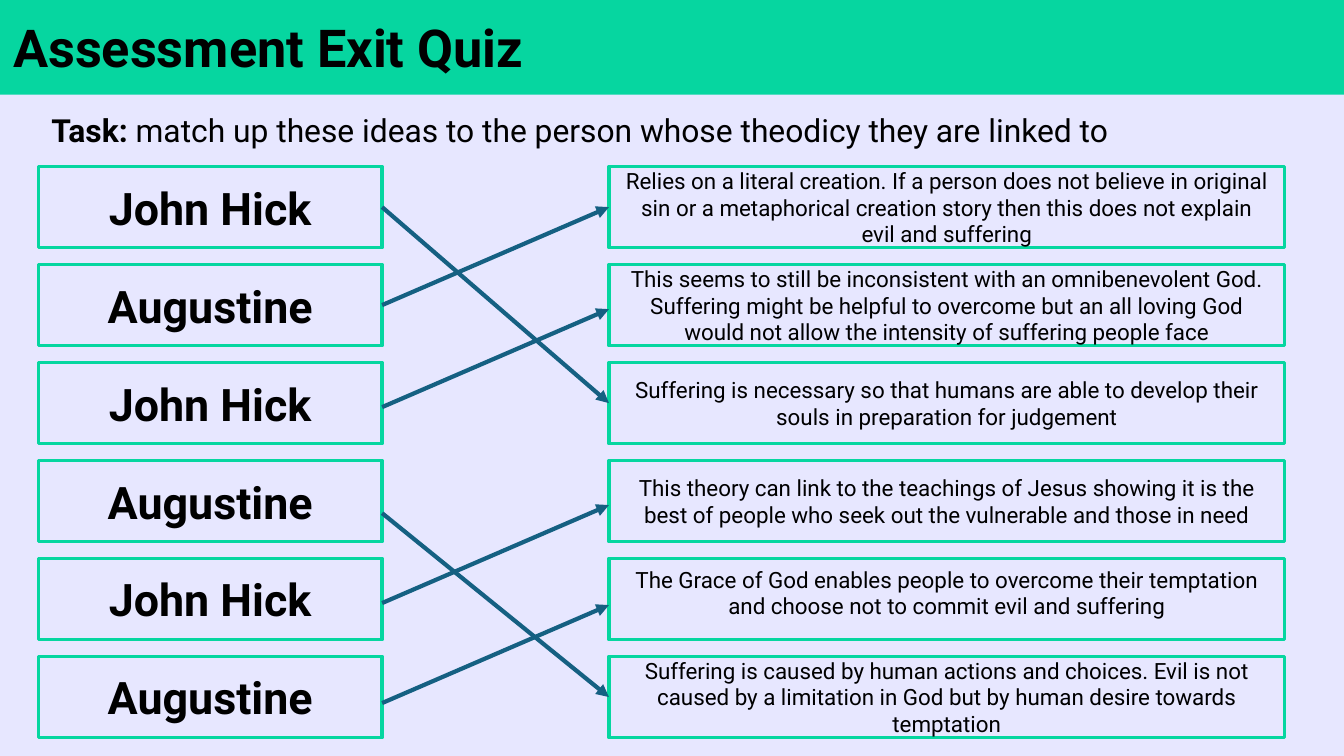
from lxml import etree
from pptx import Presentation
from pptx import util as u
from pptx.dml.color import RGBColor
from pptx.enum import shapes, text
from pptx.oxml import ns

GREEN = RGBColor(0x06, 0xD6, 0xA0)
BLUE = RGBColor(0x15, 0x60, 0x82)
LILAC = RGBColor(0xE7, 0xE7, 0xFF)
BLACK = RGBColor(0, 0, 0)
FONT = "Roboto"
INSET = 0.13

ROW_TOP, ROW_PITCH, ROW_HEIGHT = 1.65, 0.972, 0.81
NAME_COLUMN = (0.38, 3.41)
IDEA_COLUMN = (6.04, 6.7)

NAMES = ["John Hick", "Augustine", "John Hick", "Augustine", "John Hick", "Augustine"]
IDEAS = [
    "Relies on a literal creation. If a person does not believe in original sin "
    "or a metaphorical creation story then this does not explain evil and suffering",
    "This seems to still be inconsistent with an omnibenevolent God. Suffering might be "
    "helpful to overcome but an all loving God would not allow the intensity of "
    "suffering people face",
    "Suffering is necessary so that humans are able to develop their souls in "
    "preparation for judgement",
    "This theory can link to the teachings of Jesus showing it is the best of people "
    "who seek out the vulnerable and those in need",
    "The Grace of God enables people to overcome their temptation and choose not to "
    "commit evil and suffering",
    "Suffering is caused by human actions and choices. Evil is not caused by a "
    "limitation in God but by human desire towards temptation",
]
RAISED_IDEA = 4
# Name row, idea row, then how far each end sits below the middle of its box
MATCHES = [(0, 2, 0, 0), (1, 0, 0, 0), (2, 1, 0.04, 0.04),
           (3, 5, 0.12, 0), (4, 3, 0.04, 0.04), (5, 4, 0.06, 0.06)]


def style_span(span, size, bold=False):
    span.font.name, span.font.size, span.font.bold = FONT, u.Pt(size), bold
    span.font.color.rgb = BLACK


def set_insets(frame):
    frame.word_wrap = True
    frame.margin_left = frame.margin_right = u.Inches(INSET)
    frame.margin_top = frame.margin_bottom = u.Inches(INSET)


def add_box(page, at, words, size, bold=False, align=text.PP_ALIGN.CENTER):
    """Add an unfilled, unlined rectangle holding one vertically centred paragraph."""
    box = page.shapes.add_shape(shapes.MSO_SHAPE.RECTANGLE, *map(u.Inches, at))
    box.shadow.inherit = False
    box.fill.background()
    box.line.fill.background()
    frame = box.text_frame
    set_insets(frame)
    frame.vertical_anchor = text.MSO_ANCHOR.MIDDLE
    frame.text = words
    para = frame.paragraphs[0]
    para.alignment = align
    style_span(para.runs[0], size, bold)
    return box


def add_banner(page, at):
    banner = add_box(page, at, "Assessment Exit Quiz", 37.3, True, text.PP_ALIGN.LEFT)
    banner.fill.solid()
    banner.fill.fore_color.rgb = GREEN


def add_task(page, at):
    frame = page.shapes.add_textbox(*map(u.Inches, at)).text_frame
    set_insets(frame)
    frame.auto_size = text.MSO_AUTO_SIZE.SHAPE_TO_FIT_TEXT
    para = frame.paragraphs[0]
    for words, bold in (
        ("Task: ", True),
        ("match up these ideas to the person whose theodicy they are linked to", False),
    ):
        span = para.add_run()
        span.text = words
        style_span(span, 22.7, bold)


def add_column(page, column, entries, size, bold=False):
    left, width = column
    boxes = []
    for row, words in enumerate(entries):
        at = (left, ROW_TOP + row * ROW_PITCH, width, ROW_HEIGHT)
        box = add_box(page, at, words, size, bold)
        box.line.color.rgb = GREEN
        box.line.width = u.Pt(2.25)
        boxes.append(box)
    return boxes


def add_match(page, name, idea, name_drop, idea_drop):
    """Draw an arrow from a name to an idea, joined wherever it meets a side's middle."""
    arrow = page.shapes.add_connector(
        shapes.MSO_CONNECTOR.STRAIGHT,
        name.left + name.width, name.top + name.height // 2 + u.Inches(name_drop),
        idea.left, idea.top + idea.height // 2 + u.Inches(idea_drop),
    )
    if not name_drop:
        arrow.begin_connect(name, 3)
    if not idea_drop:
        arrow.end_connect(idea, 1)
    arrow.line.color.rgb = BLUE
    arrow.line.width = u.Pt(3)
    etree.SubElement(arrow.line._get_or_add_ln(), ns.qn("a:tailEnd"), type="triangle")
    etree.SubElement(arrow._element.spPr, ns.qn("a:effectLst"))


def add_quiz(page):
    names = add_column(page, NAME_COLUMN, NAMES, 32, True)
    ideas = add_column(page, IDEA_COLUMN, IDEAS, 16)
    ideas[RAISED_IDEA].text_frame.margin_bottom = u.Inches(2 * INSET)
    for name_row, idea_row, name_drop, idea_drop in MATCHES:
        add_match(page, names[name_row], ideas[idea_row], name_drop, idea_drop)


def main():
    deck = Presentation()
    deck.slide_width, deck.slide_height = u.Inches(13.33), u.Inches(7.5)
    page = deck.slides.add_slide(deck.slide_layouts[6])
    page.background.fill.solid()
    page.background.fill.fore_color.rgb = LILAC
    add_banner(page, (0, -0.02, 13.33, 0.96))
    add_task(page, (0.38, 0.97, 12.35, 0.65))
    add_quiz(page)
    deck.save("out.pptx")


if __name__ == "__main__":
    main()
